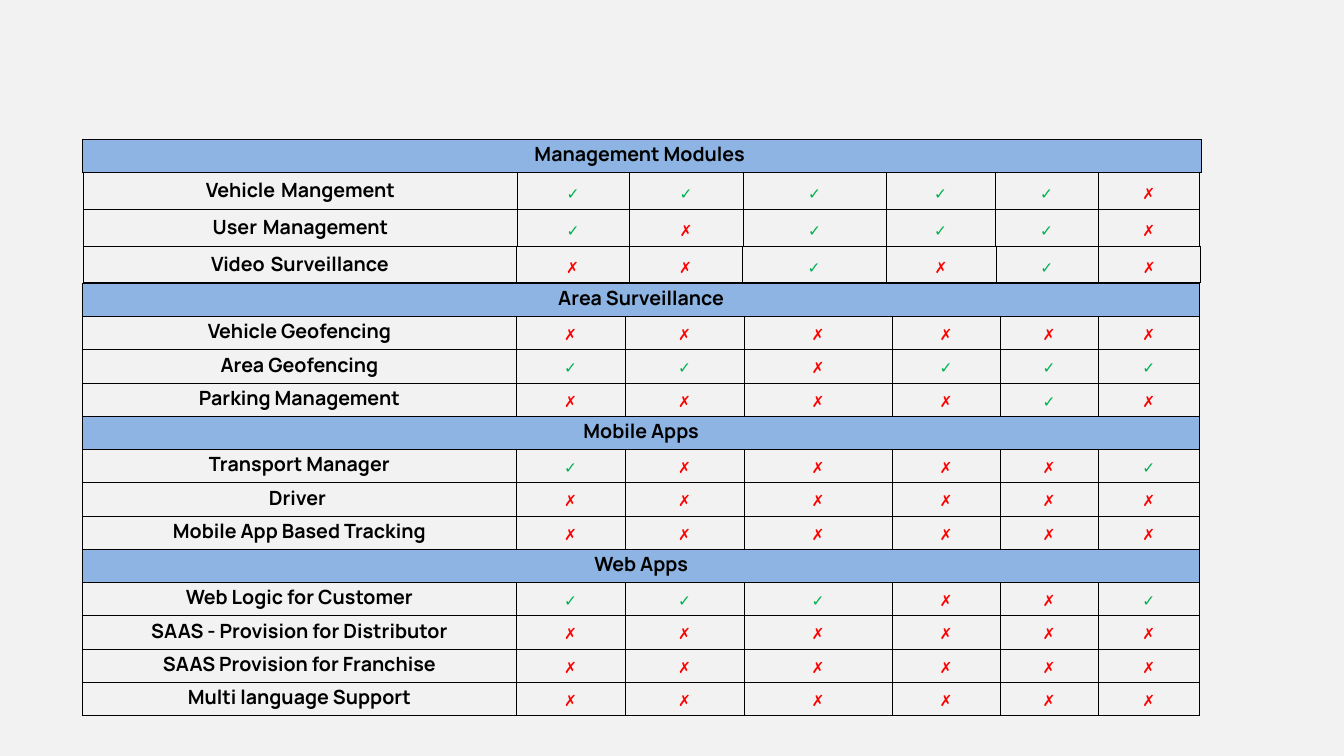
import pptx
import pptx.dml.color
import pptx.enum.shapes
import pptx.enum.text
import pptx.oxml
import pptx.oxml.ns
import pptx.util
from dataclasses import dataclass

Inches = pptx.util.Inches
Pt = pptx.util.Pt


@dataclass(frozen=True)
class Theme:
    page: str = "F2F2F2"
    section: str = "8DB4E2"
    ink: str = "000000"
    yes: str = "00B050"
    no: str = "FF0000"
    label_font: str = "Manrope"
    mark_font: str = "Calibri"
    label_size: int = 14
    mark_size: int = 11
    gap_size: int = 18
    border: float = 0.5


class SlideBuilder:
    def __init__(self, prs, theme):
        self.theme = theme
        self.prs = prs
        self.slide = prs.slides.add_slide(prs.slide_layouts[6])

    def backdrop(self):
        sp = self.slide.shapes.add_shape(
            pptx.enum.shapes.MSO_SHAPE.RECTANGLE, 0, 0, self.prs.slide_width, self.prs.slide_height)
        sp.shadow.inherit = False
        sp.fill.solid()
        sp.fill.fore_color.rgb = pptx.dml.color.RGBColor.from_string(self.theme.page)
        sp.line.fill.background()

    def table(self, left, top, widths, row_height, rows, wide_gap=False):
        frame = self.slide.shapes.add_table(
            len(rows), len(widths), Inches(left), Inches(top),
            Inches(sum(widths)), Inches(row_height * len(rows)))
        table = frame.table
        table.first_row = table.horz_banding = False
        for column, width in zip(table.columns, widths):
            column.width = Inches(width)
        for i, (label, marks) in enumerate(rows):
            table.rows[i].height = Inches(row_height)
            for j in range(len(widths)):
                self.frame_cell(table.cell(i, j), None if marks else self.theme.section)
            if not marks and len(widths) > 1:
                table.cell(i, 0).merge(table.cell(i, len(widths) - 1))
            self.label(table.cell(i, 0), label, wide_gap)
            for j, mark in enumerate(marks, 1):
                self.mark(table.cell(i, j), mark)

    def frame_cell(self, cell, fill):
        tcPr = cell._tc.get_or_add_tcPr()
        for side in "LRTB":
            tcPr.append(pptx.oxml.parse_xml(
                f'<a:ln{side} {pptx.oxml.ns.nsdecls("a")} w="{Pt(self.theme.border)}">'
                f'<a:solidFill><a:srgbClr val="{self.theme.ink}"/></a:solidFill></a:ln{side}>'))
        cell.margin_left = cell.margin_right = cell.margin_top = Inches(0.01)
        cell.margin_bottom = Inches(0.05)
        cell.vertical_anchor = pptx.enum.text.MSO_ANCHOR.BOTTOM
        if fill:
            cell.fill.solid()
            cell.fill.fore_color.rgb = pptx.dml.color.RGBColor.from_string(fill)
        else:
            cell.fill.background()

    def label(self, cell, text, wide_gap):
        theme = self.theme
        p = cell.text_frame.paragraphs[0]
        p.alignment = pptx.enum.text.PP_ALIGN.CENTER
        for part in text.partition(" ") if wide_gap else [text]:
            r = p.add_run()
            r.text = part
            if part == " ":
                self.style(r, theme.mark_font, theme.gap_size, theme.ink, False)
            else:
                self.style(r, theme.label_font, theme.label_size, theme.ink)

    def mark(self, cell, text):
        theme = self.theme
        p = cell.text_frame.paragraphs[0]
        p.text = text
        p.alignment = pptx.enum.text.PP_ALIGN.CENTER
        self.style(p.runs[0], theme.mark_font, theme.mark_size,
                   theme.yes if text == "✓" else theme.no)

    def style(self, r, font, size, color, bold=True):
        r.font.name = font
        r.font.size = Pt(size)
        r.font.bold = bold
        r.font.color.rgb = pptx.dml.color.RGBColor.from_string(color)


FEATURES = [
    ("Area Surveillance", ""),
    ("Vehicle Geofencing", "✗✗✗✗✗✗"),
    ("Area Geofencing", "✓✓✗✓✓✓"),
    ("Parking Management", "✗✗✗✗✓✗"),
    ("Mobile Apps", ""),
    ("Transport Manager", "✓✗✗✗✗✓"),
    ("Driver ", "✗✗✗✗✗✗"),
    ("Mobile App Based Tracking", "✗✗✗✗✗✗"),
    ("Web Apps", ""),
    ("Web Logic for Customer", "✓✓✓✗✗✓"),
    ("SAAS - Provision for Distributor", "✗✗✗✗✗✗"),
    ("SAAS Provision for Franchise", "✗✗✗✗✗✗"),
    ("Multi language Support", "✗✗✗✗✗✗"),
]
MANAGEMENT = [
    ("Vehicle Mangement", "✓✓✓✓✓✗"),
    ("User Management", "✓✗✓✓✓✗"),
]
VIDEO = [("Video Surveillance", "✗✗✓✗✓✗")]


def main():
    prs = pptx.Presentation()
    prs.slide_width = Inches(13.33)
    prs.slide_height = Inches(7.5)
    s = SlideBuilder(prs, Theme())
    s.backdrop()
    s.table(0.82, 1.38, [11.09], 0.33, [("Management Modules ", "")])
    s.table(0.82, 2.81, [4.3, 1.08, 1.18, 1.47, 1.07, 0.97, 1.01], 0.33, FEATURES)
    s.table(0.83, 1.71, [4.3, 1.11, 1.13, 1.42, 1.08, 1.02, 1.01], 0.36, MANAGEMENT, wide_gap=True)
    s.table(0.83, 2.44, [4.29, 1.12, 1.12, 1.43, 1.09, 1.01, 1.02], 0.36, VIDEO, wide_gap=True)
    prs.save("out.pptx")


if __name__ == "__main__":
    main()
